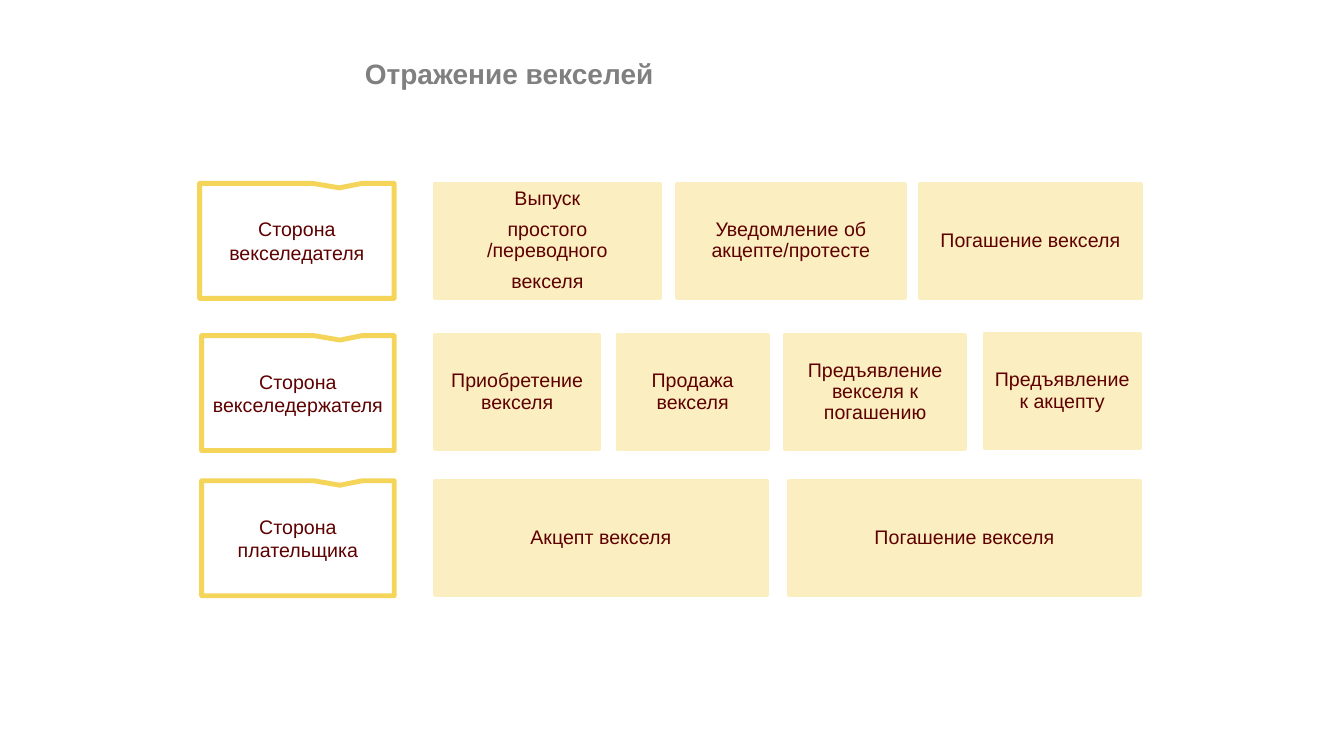
"""Build a slide on how each party records promissory notes."""
from dataclasses import dataclass

from pptx import Presentation
from pptx.dml.color import RGBColor
from pptx.enum.shapes import MSO_SHAPE as Preset
from pptx.enum.text import MSO_ANCHOR as Anchor, PP_ALIGN as Align
from pptx.shapes.autoshape import Shape
from pptx.slide import Slide
from pptx.text.text import TextFrame
from pptx.util import Inches, Pt

WHITE = RGBColor(0xFF, 0xFF, 0xFF)
GREY = RGBColor(0x80, 0x80, 0x80)
MAROON = RGBColor(0x5F, 0x00, 0x00)
CREAM = RGBColor(0xFB, 0xEF, 0xC1)
GOLD = RGBColor(0xF4, 0xD4, 0x59)
FONT = "Arial"
BOX_HEIGHT = 1.14
SIDE_MARGIN = 0.05


@dataclass(frozen=True)
class Box:
    left: float
    top: float
    width: float
    paragraphs: tuple[str, ...]


PARTIES = (
    Box(1.98, 1.82, 1.93, ("Сторона векселедателя",)),
    Box(2, 3.33, 1.91, ("Сторона векселедержателя",)),
    Box(2, 4.77, 1.91, ("Сторона плательщика",)),
)
OPERATIONS = (
    Box(4.31, 1.82, 2.24, ("Выпуск", "простого /переводного", "векселя")),
    Box(6.71, 1.82, 2.27, ("Уведомление об акцепте/протесте",)),
    Box(9.12, 1.82, 2.2, ("Погашение векселя",)),
    Box(4.31, 3.32, 1.64, ("Приобретение векселя",)),
    Box(6.12, 3.32, 1.5, ("Продажа векселя",)),
    Box(7.78, 3.32, 1.8, ("Предъявление векселя к погашению",)),
    Box(9.76, 3.31, 1.55, ("Предъявление к акцепту",)),
    Box(4.31, 4.77, 3.3, ("Акцепт векселя",)),
    Box(7.82, 4.77, 3.49, ("Погашение векселя",)),
)


def write_text(frame: TextFrame, paragraphs: tuple[str, ...], size: float, color: RGBColor,
               align: Align, line_spacing: float, bold: bool = False) -> None:
    """Write the paragraphs into a vertically centred frame."""
    frame.word_wrap = True
    frame.vertical_anchor = Anchor.MIDDLE
    for index, text in enumerate(paragraphs):
        paragraph = frame.add_paragraph() if index else frame.paragraphs[0]
        paragraph.alignment = align
        paragraph.line_spacing = line_spacing
        paragraph.space_before = Pt(size / 2 if index else 0)
        run = paragraph.add_run()
        run.text = text
        run.font.name = FONT
        run.font.size = Pt(size)
        run.font.bold = bold
        run.font.color.rgb = color


def add_box(slide: Slide, box: Box, preset: Preset, fill: RGBColor, line: RGBColor,
            line_width: float, line_spacing: float) -> Shape:
    """Draw a filled, outlined box with its centred text."""
    shape = slide.shapes.add_shape(preset, Inches(box.left), Inches(box.top),
                                   Inches(box.width), Inches(BOX_HEIGHT))
    shape.shadow.inherit = False
    shape.fill.solid()
    shape.fill.fore_color.rgb = fill
    shape.line.color.rgb = line
    shape.line.width = Pt(line_width)
    frame = shape.text_frame
    frame.margin_left = frame.margin_right = Inches(box.width * SIDE_MARGIN)
    write_text(frame, box.paragraphs, 14, MAROON, Align.CENTER, line_spacing)
    return shape


def main() -> None:
    """Assemble and save the slide."""
    presentation = Presentation()
    presentation.slide_width = Inches(13.33)
    presentation.slide_height = Inches(7.5)
    slide = presentation.slides.add_slide(presentation.slide_layouts[6])
    title = slide.shapes.add_textbox(Inches(3.52), Inches(0.17), Inches(7.69), Inches(1.18))
    write_text(title.text_frame, ("Отражение векселей",), 20, GREY, Align.LEFT, 0.8, bold=True)
    for operation in OPERATIONS:
        add_box(slide, operation, Preset.RECTANGLE, CREAM, CREAM, 2, 0.9)
    for party in PARTIES:
        callout = add_box(slide, party, Preset.RECTANGULAR_CALLOUT, WHITE, GOLD, 3.5, 1.0)
        callout.adjustments[0] = 0.218
        callout.adjustments[1] = -0.461
    presentation.save("out.pptx")


if __name__ == "__main__":
    main()
